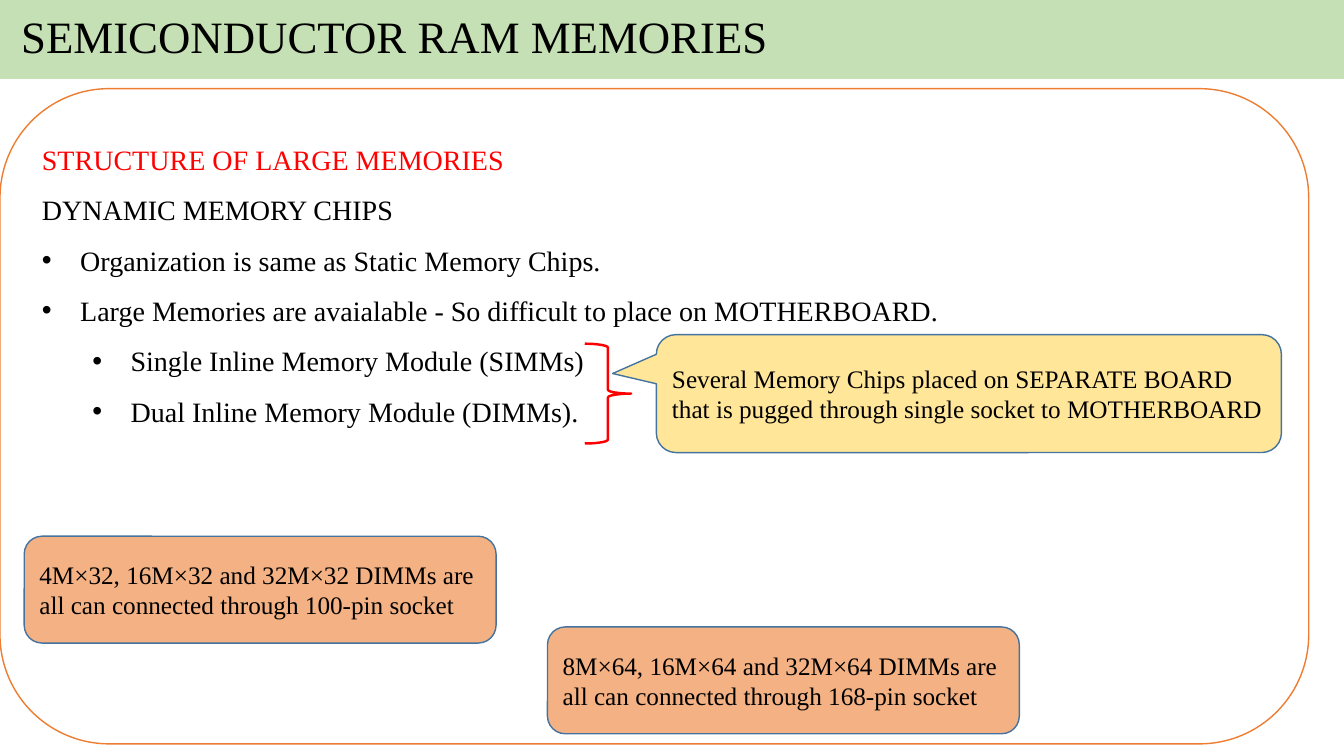
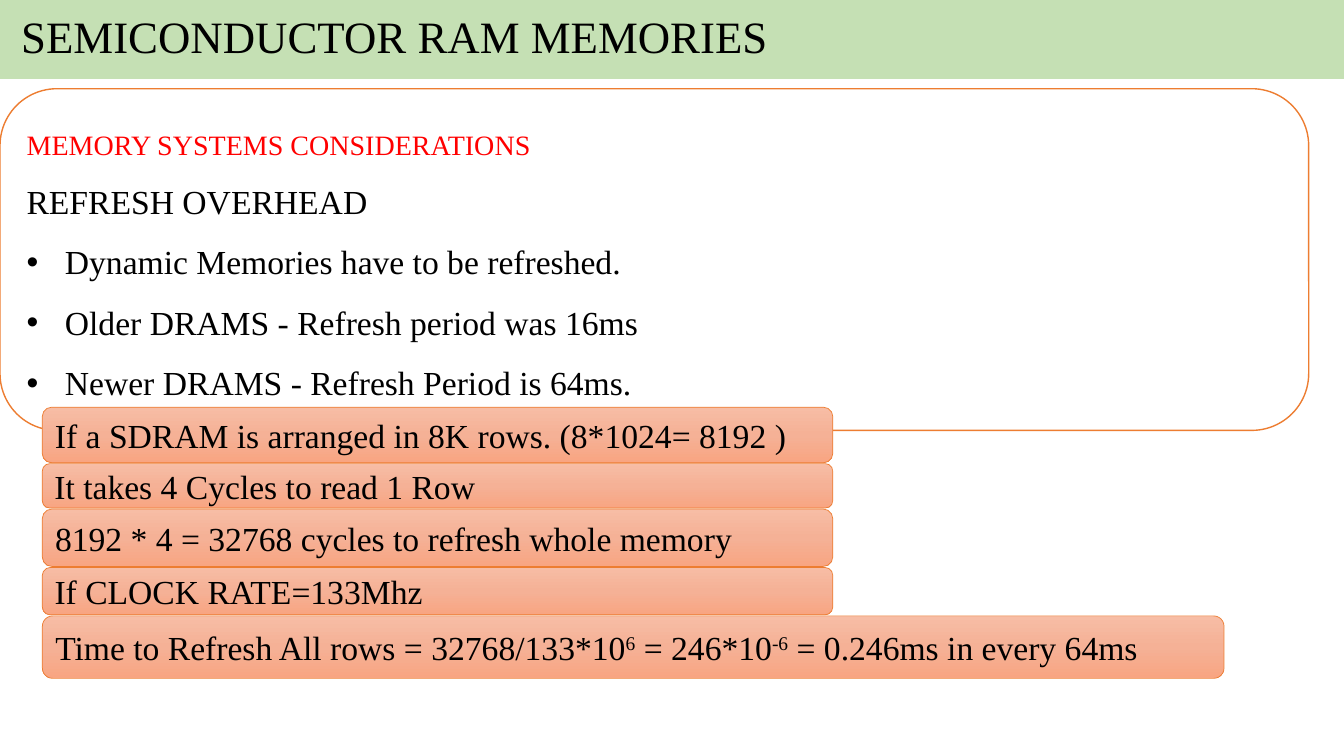
from copy import deepcopy

from pptx import Presentation
from pptx.dml.color import RGBColor
from pptx.enum.shapes import MSO_SHAPE as SHAPE
from pptx.enum.text import MSO_ANCHOR as ANCHOR, PP_ALIGN as ALIGN
from pptx.oxml.ns import qn
from pptx.util import Inches, Pt

COLORS = {
    "black": "000000",
    "red": "FF0000",
    "white": "FFFFFF",
    "green": "C5E0B4",
    "orange": "ED7D31",
    "blue": "43739E",
    "yellow": "FFE699",
    "peach": "F4B183",
}
STEP_GRADIENT = ["F7BDA5", "F5B196", "F8A582"]
FONT = "Times New Roman"
TITLE = "SEMICONDUCTOR RAM MEMORIES"


def rgb(name):
    return RGBColor.from_string(COLORS[name])


class Deck:
    def __init__(self):
        self.prs = Presentation()
        self.prs.slide_width = Inches(13.33)
        self.prs.slide_height = Inches(7.5)
        self.s = None

    def add_slide(self, title):
        self.s = self.prs.slides.add_slide(self.prs.slide_layouts[6])
        sp = self.shape(SHAPE.RECTANGLE, (0, 0, 13.33, 0.78), "green", "green", 0.75)
        sp.text_frame.margin_left = Inches(0.21)
        p = self.label(sp, title, 32)
        p.line_spacing = 0.9

    def shape(self, kind, at, fill, line, width):
        sp = self.s.shapes.add_shape(kind, *[Inches(v) for v in at])
        sp.shadow.inherit = False
        if fill:
            sp.fill.solid()
            sp.fill.fore_color.rgb = rgb(fill)
        else:
            sp.fill.background()
        sp.line.color.rgb = rgb(line)
        sp.line.width = Pt(width)
        return sp

    def style(self, p, size, color="black"):
        p.alignment = ALIGN.LEFT
        for r in p.runs:
            r.font.name = FONT
            r.font.size = Pt(size)
            r.font.color.rgb = rgb(color)

    def label(self, sp, text, size):
        tf = sp.text_frame
        tf.word_wrap = True
        tf.vertical_anchor = ANCHOR.MIDDLE
        p = tf.paragraphs[0]
        p.text = text
        self.style(p, size)
        return p

    def bullet(self, p, level):
        p.level = level
        pPr = p._p.get_or_add_pPr()
        pPr.set("marL", str(Inches(0.38 + 0.5 * level)))
        pPr.set("indent", str(Inches(-0.38)))
        font = pPr.makeelement(qn("a:buFont"), {"typeface": "Arial"})
        char = pPr.makeelement(qn("a:buChar"), {"char": "•"})
        pPr.extend([font, char])

    def panel(self, height, heading, subheading, bullets, size):
        sp = self.shape(SHAPE.FLOWCHART_ALTERNATE_PROCESS,
                        (0, 0.88, 12.98, height), "white", "orange", 1)
        tf = sp.text_frame
        tf.word_wrap = True
        tf.vertical_anchor = ANCHOR.TOP
        tf.text = "\n".join([heading, subheading] + [text for text, _ in bullets])
        for p in tf.paragraphs:
            p.line_spacing = 1.5
            self.style(p, size)
        self.style(tf.paragraphs[0], 20, "red")
        for p, (_, level) in zip(tf.paragraphs[2:], bullets):
            self.bullet(p, level)

    def brace(self, at):
        self.shape(SHAPE.RIGHT_BRACE, at, None, "red", 1.75)

    def callout(self, at, text, tip):
        sp = self.shape(SHAPE.ROUNDED_RECTANGULAR_CALLOUT, at, "yellow", "blue", 1)
        sp.adjustments[0], sp.adjustments[1] = tip
        self.label(sp, text, 18)

    def note(self, left, top, text):
        sp = self.shape(SHAPE.FLOWCHART_ALTERNATE_PROCESS,
                        (left, top, 4.68, 1.06), "peach", "blue", 1)
        self.label(sp, text, 18)

    def step(self, at, parts):
        sp = self.shape(SHAPE.FLOWCHART_ALTERNATE_PROCESS, at, None, "orange", 0.5)
        sp.fill.gradient()
        sp.fill.gradient_angle = 270
        first = sp._element.spPr.find(qn("a:gradFill")).find(qn("a:gsLst"))[0]
        middle = deepcopy(first)
        middle.set("pos", "50000")
        first.addnext(middle)
        for stop, color in zip(sp.fill.gradient_stops, STEP_GRADIENT):
            stop.color.rgb = RGBColor.from_string(color)
        p = self.label(sp, parts[0], 24)
        for i, part in enumerate(parts[1:]):
            r = p.add_run()
            r.text = part
            if i % 2 == 0:
                r.font._element.set("baseline", "30000")
        self.style(p, 24)


def memory_chips(deck):
    deck.add_slide(TITLE)
    deck.panel(6.5, "STRUCTURE OF LARGE MEMORIES", "DYNAMIC MEMORY CHIPS", [
        ("Organization is same as Static Memory Chips.", 0),
        ("Large Memories are avaialable - So difficult to place on MOTHERBOARD.", 0),
        ("Single Inline Memory Module (SIMMs)", 1),
        ("Dual Inline Memory Module (DIMMs).", 1),
    ], 20)
    deck.brace((5.8, 3.41, 0.46, 0.99))
    deck.callout((6.51, 3.32, 6.2, 1.17),
                 "Several Memory Chips placed on SEPARATE BOARD that is pugged "
                 "through single socket to MOTHERBOARD", (-0.57, -0.17))
    deck.note(0.24, 5.32, "4M×32, 16M×32 and 32M×32 DIMMs are all can connected "
                          "through 100-pin socket")
    deck.note(5.43, 6.22, "8M×64, 16M×64 and 32M×64 DIMMs are all can connected "
                          "through 168-pin socket")


def refresh_overhead(deck):
    deck.add_slide(TITLE)
    deck.panel(3.39, "MEMORY SYSTEMS CONSIDERATIONS", "REFRESH OVERHEAD", [
        ("Dynamic Memories have to be refreshed.", 0),
        ("Older DRAMS - Refresh period was 16ms", 0),
        ("Newer DRAMS - Refresh Period is 64ms.", 0),
    ], 24)
    steps = [
        (7.84, 0.55, ["If a SDRAM is arranged in 8K rows. (8*1024= 8192 )"]),
        (7.84, 0.44, ["It takes 4 Cycles to read 1 Row"]),
        (7.84, 0.57, ["8192 * 4 = 32768 cycles to refresh whole memory"]),
        (7.84, 0.47, ["If CLOCK RATE=133Mhz"]),
        (11.72, 0.62, ["Time to Refresh All rows = 32768/133*10", "6",
                       " = 246*10", "-6", " = 0.246ms in every 64ms"]),
    ]
    top = 4.04
    for width, height, parts in steps:
        deck.step((0.42, top, width, height), parts)
        top += height + 0.01


def main():
    deck = Deck()
    memory_chips(deck)
    refresh_overhead(deck)
    deck.prs.save("out.pptx")


if __name__ == "__main__":
    main()
